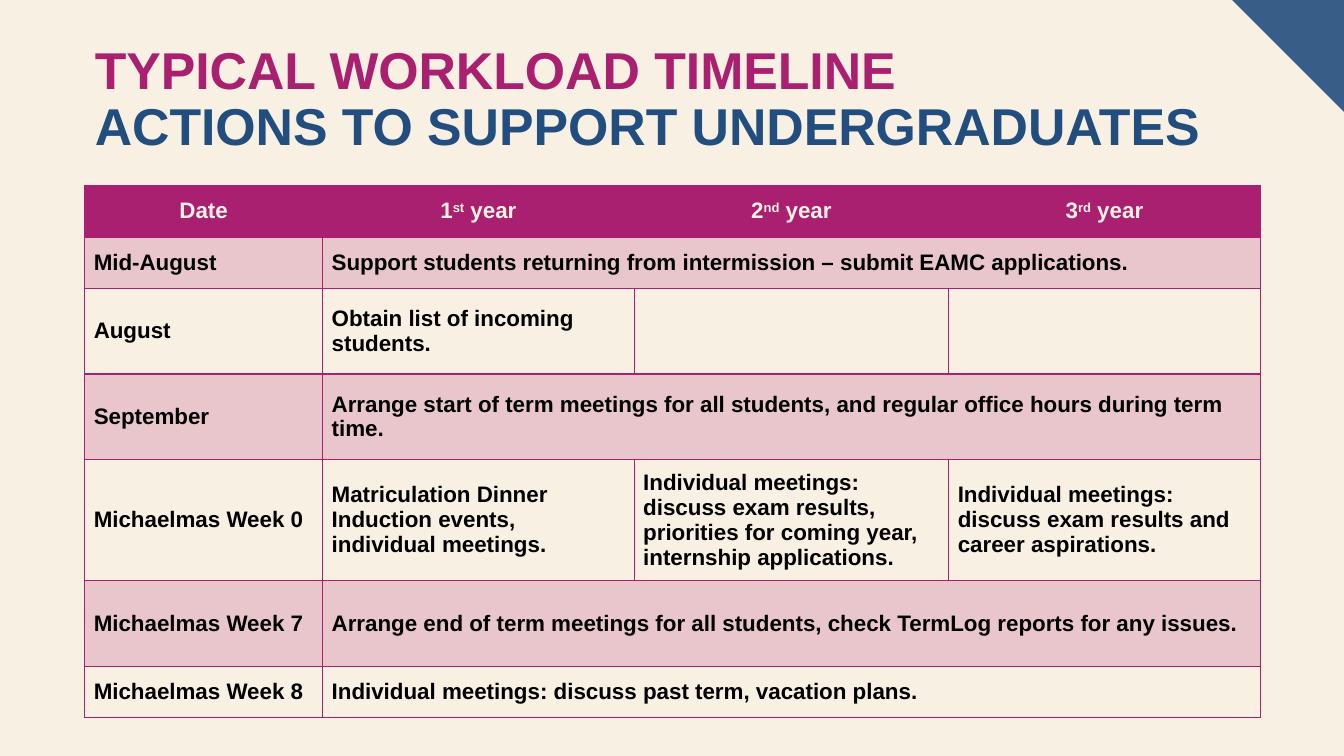
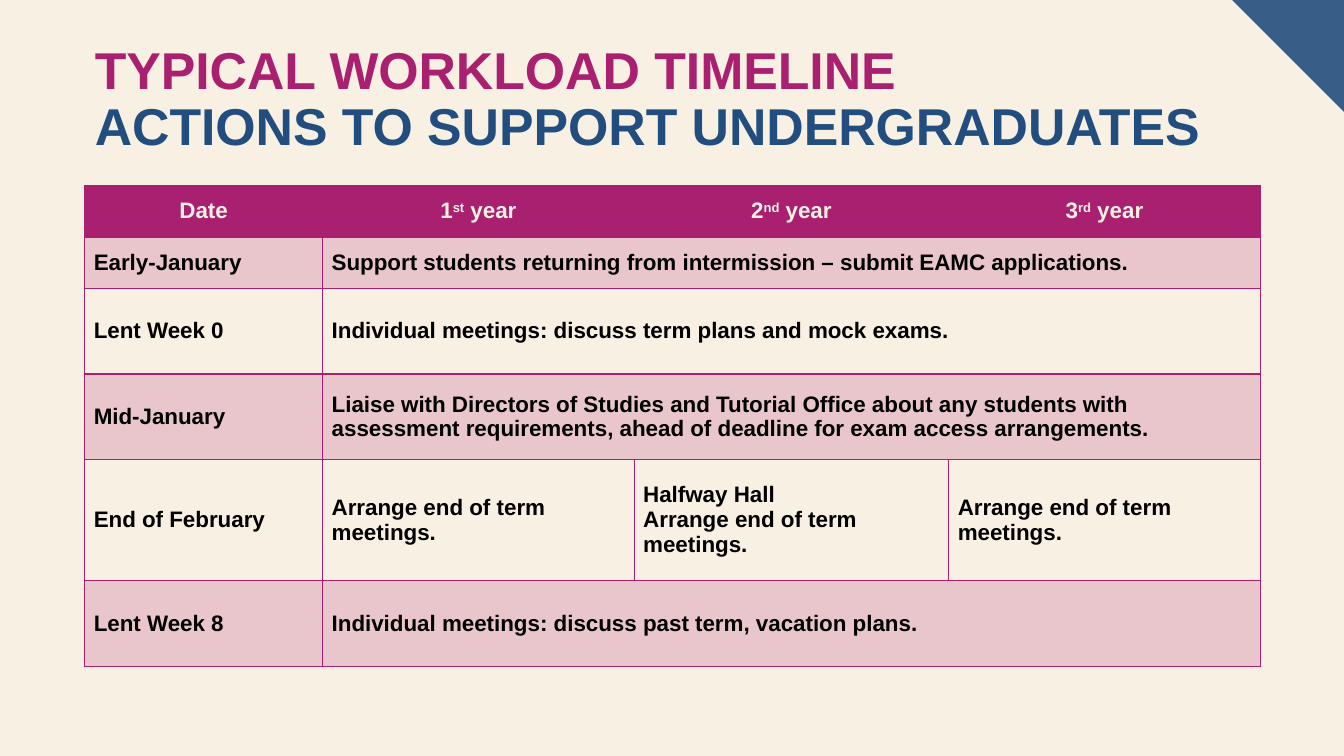
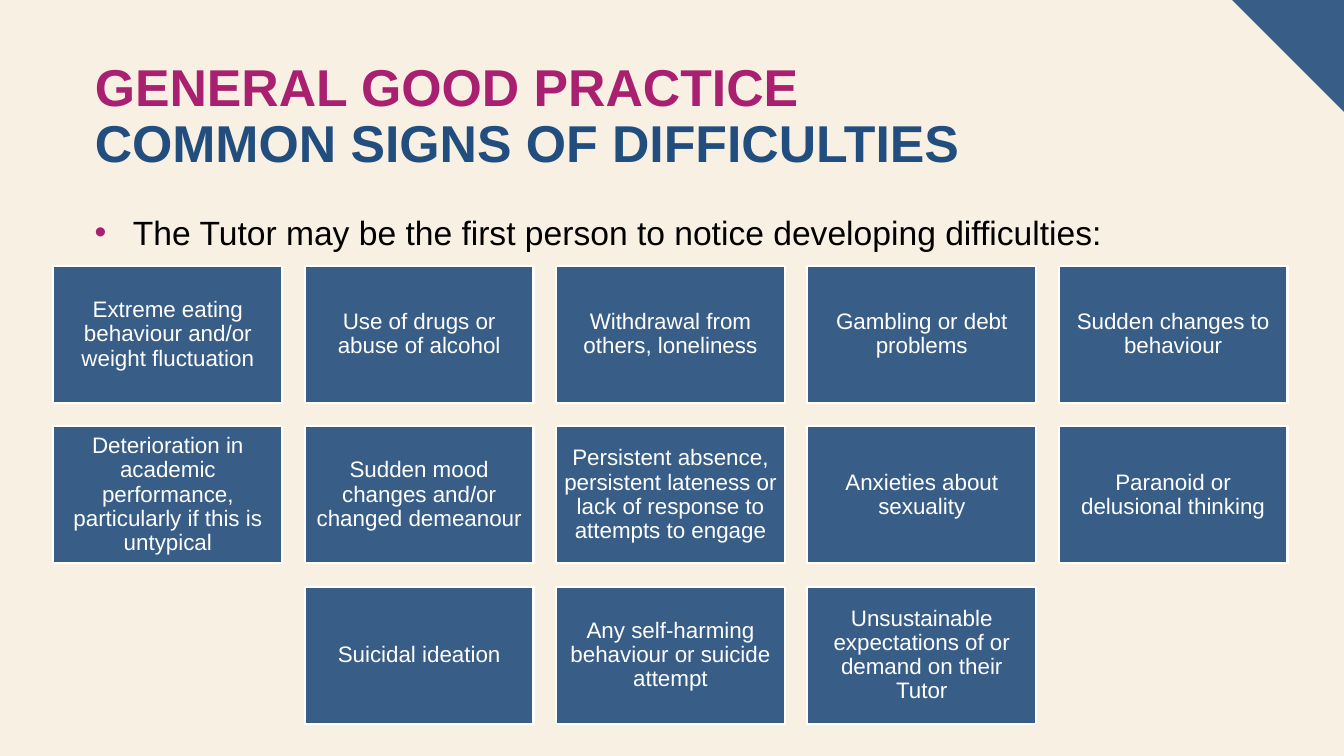
from lxml import etree
from pptx import Presentation
from pptx.dml.color import RGBColor
from pptx.enum import shapes, text
from pptx.oxml import ns
from pptx.util import Inches, Pt

COLOURS = {
    "cream": "F8F0E3",
    "magenta": "AA2070",
    "navy": "224E7F",
    "blue": "385E88",
    "white": "FFFFFF",
    "black": "000000",
}
FONT = "Arial"
TIGHT = 0.9
SLIDE_WIDTH, SLIDE_HEIGHT = 13.33, 7.5
CORNER_SIZE = 1.11

# Timeline tables
TABLE_BOX = (0.84, 1.84, 11.66)
COLUMN_WIDTHS = [2.36, 3.09, 3.12, 3.09]
ROW_HEIGHTS = [0.51, 0.51, 0.85, 0.85, 1.2, 0.85, 0.51]
YEARS = [("1", "st"), ("2", "nd"), ("3", "rd")]
TIMELINE_TITLE = ("TYPICAL WORKLOAD TIMELINE", "ACTIONS TO SUPPORT UNDERGRADUATES")

# Each row is a date and its actions; a single action covers all three years
MICHAELMAS = [
    ("Mid-August", "Support students returning from intermission – submit EAMC applications."),
    ("August", "Obtain list of incoming students.", "", ""),
    ("September", "Arrange start of term meetings for all students, and regular office "
                  "hours during term time."),
    ("Michaelmas Week 0",
     "Matriculation Dinner\nInduction events, individual meetings.",
     "Individual meetings: discuss exam results, priorities for coming year, "
     "internship applications.",
     "Individual meetings: discuss exam results and career aspirations."),
    ("Michaelmas Week 7", "Arrange end of term meetings for all students, check TermLog "
                          "reports for any issues."),
    ("Michaelmas Week 8", "Individual meetings: discuss past term, vacation plans."),
]
LENT = [
    ("Early-January", "Support students returning from intermission – submit EAMC applications."),
    ("Lent Week 0", "Individual meetings: discuss term plans and mock exams."),
    ("Mid-January", "Liaise with Directors of Studies and Tutorial Office about any students "
                    "with assessment requirements, ahead of deadline for exam access "
                    "arrangements."),
    ("End of February",
     "Arrange end of term meetings.",
     "Halfway Hall\nArrange end of term meetings.",
     "Arrange end of term meetings."),
    ("Lent Week 8", "Individual meetings: discuss past term, vacation plans."),
]

# Warning signs, row by row
SIGNS = [
    ["Extreme eating behaviour and/or weight fluctuation",
     "Use of drugs or abuse of alcohol",
     "Withdrawal from others, loneliness",
     "Gambling or debt problems",
     "Sudden changes to behaviour"],
    ["Deterioration in academic performance, particularly if this is untypical",
     "Sudden mood changes and/or changed demeanour",
     "Persistent absence, persistent lateness or lack of response to attempts to engage",
     "Anxieties about sexuality",
     "Paranoid or delusional thinking"],
    ["Suicidal ideation",
     "Any self-harming behaviour or suicide attempt",
     "Unsustainable expectations of or demand on their Tutor"],
]


def colour(name):
    return RGBColor.from_string(COLOURS[name])


def apply(target, **values):
    for name, value in values.items():
        setattr(target, name, value)


def add_span(para, words, size, shade, bold=False):
    span = para.add_run()
    span.text = words
    apply(span.font, name=FONT, size=Pt(size), bold=bold)
    span.font.color.rgb = colour(shade)
    return span


def add_child(parent, tag, **attributes):
    return etree.SubElement(parent, ns.qn(tag), attributes)


# Shared slide parts
def add_page(deck, title_lines, title_box):
    page = deck.slides.add_slide(deck.slide_layouts[5])
    add_corner(page)
    add_title(page, title_lines, title_box)
    return page


def add_corner(page):
    right, size = Inches(SLIDE_WIDTH), Inches(CORNER_SIZE)
    builder = page.shapes.build_freeform(right - size, 0)
    builder.add_line_segments([(right, 0), (right, size)], close=True)
    corner = builder.convert_to_shape()
    corner.shadow.inherit = False
    corner.fill.solid()
    corner.fill.fore_color.rgb = colour("blue")
    corner.line.fill.background()


def add_title(page, lines, box):
    title = page.shapes.title
    left, top, width, height = map(Inches, box)
    apply(title, left=left, top=top, width=width, height=height)
    apply(title.text_frame, word_wrap=True, auto_size=text.MSO_AUTO_SIZE.NONE,
          vertical_anchor=text.MSO_ANCHOR.TOP)
    para = title.text_frame.paragraphs[0]
    apply(para, alignment=text.PP_ALIGN.LEFT, line_spacing=TIGHT)
    add_span(para, lines[0], 37, "magenta", bold=True)
    para.add_line_break()
    add_span(para, lines[1], 37, "navy", bold=True)


# Timeline slide
def style_cell(cell, fill, alpha=None, bottom=1):
    apply(cell, vertical_anchor=text.MSO_ANCHOR.MIDDLE,
          margin_left=Inches(0.09), margin_right=Inches(0.09),
          margin_top=Inches(0.04), margin_bottom=Inches(0.04))
    properties = cell._tc.get_or_add_tcPr()
    for side, points in (("L", 1), ("R", 1), ("T", 1), ("B", bottom)):
        border = add_child(properties, f"a:ln{side}", w=str(Pt(points)))
        add_child(add_child(border, "a:solidFill"), "a:srgbClr", val=COLOURS["magenta"])
    if not fill:
        cell.fill.background()
        return
    cell.fill.solid()
    cell.fill.fore_color.rgb = colour(fill)
    if alpha:
        shade = properties.find(ns.qn("a:solidFill")).find(ns.qn("a:srgbClr"))
        add_child(shade, "a:alpha", val=str(alpha * 1000))


def fill_header(table):
    for column, cell in enumerate(table.rows[0].cells):
        style_cell(cell, "magenta", bottom=2)
        para = cell.text_frame.paragraphs[0]
        para.alignment = text.PP_ALIGN.CENTER
        if column == 0:
            add_span(para, "Date", 16, "cream", bold=True)
            continue
        number, suffix = YEARS[column - 1]
        add_span(para, number, 16, "cream", bold=True)
        ordinal = add_span(para, suffix, 16, "cream", bold=True)
        ordinal._r.get_or_add_rPr().set("baseline", "30000")
        add_span(para, " year", 16, "cream", bold=True)


def add_timeline(page, rows, box):
    heights = ROW_HEIGHTS[:len(rows) + 1]
    left, top, width = box
    frame = page.shapes.add_table(len(heights), len(COLUMN_WIDTHS), Inches(left), Inches(top),
                                  Inches(width), Inches(sum(heights)))
    table = frame.table
    table.horz_banding = False
    for column, column_width in zip(table.columns, COLUMN_WIDTHS):
        column.width = Inches(column_width)
    for row, height in zip(table.rows, heights):
        row.height = Inches(height)
    fill_header(table)
    for index, entries in enumerate(rows, start=1):
        tint = ("magenta", 20) if index % 2 else (None,)
        for cell in table.rows[index].cells:
            style_cell(cell, *tint)
        if len(entries) == 2:
            table.cell(index, 1).merge(table.cell(index, 3))
        for column, words in enumerate(entries):
            body = table.cell(index, column).text_frame
            for position, line in enumerate(words.split("\n")):
                para = body.add_paragraph() if position else body.paragraphs[0]
                if line:
                    add_span(para, line, 16, "black", bold=True)


def timeline_slide(deck, rows):
    page = add_page(deck, TIMELINE_TITLE, (0.84, 0.39, 11.66, 1.45))
    add_timeline(page, rows, TABLE_BOX)


# Warning signs slide
def add_bullet(page, words, box):
    frame = page.shapes.add_textbox(*map(Inches, box)).text_frame
    frame.word_wrap = True
    para = frame.paragraphs[0]
    para.space_after = Pt(12)
    properties = para._p.get_or_add_pPr()
    properties.set("marL", str(Inches(0.38)))
    properties.set("indent", str(Inches(-0.38)))
    add_child(add_child(properties, "a:buClr"), "a:srgbClr", val=COLOURS["magenta"])
    add_child(properties, "a:buFont", typeface=FONT)
    add_child(properties, "a:buChar", char="•")
    add_span(para, words, 24, "black")


def add_card(page, words, box):
    card = page.shapes.add_shape(shapes.MSO_SHAPE.RECTANGLE, *map(Inches, box))
    card.shadow.inherit = False
    card.fill.solid()
    card.fill.fore_color.rgb = colour("blue")
    card.line.color.rgb = colour("white")
    card.line.width = Pt(1.5)
    inset = Inches(0.07)
    apply(card.text_frame, word_wrap=True, vertical_anchor=text.MSO_ANCHOR.MIDDLE,
          margin_left=inset, margin_right=inset, margin_top=inset, margin_bottom=inset)
    para = card.text_frame.paragraphs[0]
    apply(para, alignment=text.PP_ALIGN.CENTER, line_spacing=TIGHT)
    add_span(para, words, 16, "white")


def add_card_grid(page, rows, box):
    left, top, width, height = box
    card_width, card_height = 2.27, 1.36
    most = max(map(len, rows))
    step_x = (width - card_width) / (most - 1)
    step_y = (height - card_height) / (len(rows) - 1)
    for row, signs in enumerate(rows):
        row_left = left + (most - len(signs)) / 2 * step_x
        for column, words in enumerate(signs):
            add_card(page, words, (row_left + column * step_x, top + row * step_y,
                                   card_width, card_height))


def signs_slide(deck):
    page = add_page(deck, ("GENERAL GOOD PRACTICE", "COMMON SIGNS OF DIFFICULTIES"),
                    (0.84, 0.56, 11.22, 1.49))
    add_bullet(page, "The Tutor may be the first person to notice developing difficulties:",
               (0.84, 2.05, 10.79, 0.55))
    add_card_grid(page, SIGNS, (0.53, 2.64, 12.24, 4.54))


def main():
    deck = Presentation()
    apply(deck, slide_width=Inches(SLIDE_WIDTH), slide_height=Inches(SLIDE_HEIGHT))
    background = deck.slide_master.background.fill
    background.solid()
    background.fore_color.rgb = colour("cream")
    timeline_slide(deck, MICHAELMAS)
    timeline_slide(deck, LENT)
    signs_slide(deck)
    deck.save("out.pptx")


if __name__ == "__main__":
    main()
